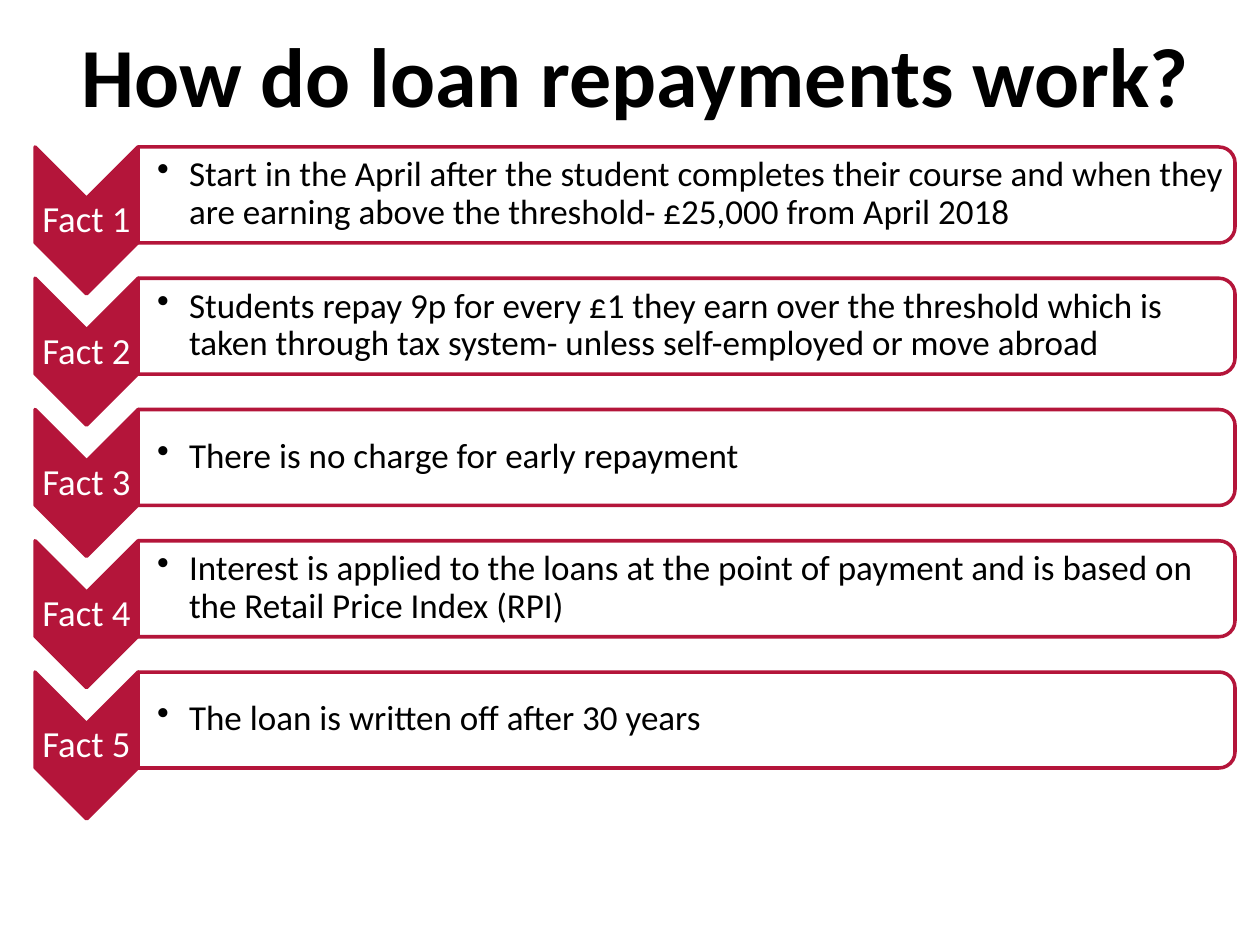
from pptx import Presentation
from pptx.dml.color import RGBColor
from pptx.enum.shapes import MSO_SHAPE as Preset
from pptx.enum.text import MSO_ANCHOR as Anchor, MSO_AUTO_SIZE as AutoSize, PP_ALIGN as Align
from pptx.oxml.ns import qn
from pptx.util import Emu, Pt
from lxml.etree import SubElement

PX_PER_INCH = 126
CRIMSON = RGBColor(0xB4, 0x15, 0x3A)
WHITE = RGBColor(0xFF, 0xFF, 0xFF)
BLACK = RGBColor(0, 0, 0)

FIRST_TOP, LAST_TOP = 147, 672
FACTS = [
    "Start in the April after the student completes their course and when they "
    "are earning above the threshold- £25,000 from April 2018",
    "Students repay 9p for every £1 they earn over the threshold which is "
    "taken through tax system- unless self-employed or move abroad",
    "There is no charge for early repayment",
    "Interest is applied to the loans at the point of payment and is based on "
    "the Retail Price Index (RPI)",
    "The loan is written off after 30 years",
]

TITLE_FONT = {"name": "Calibri", "size": Pt(48), "bold": True}
LABEL_FONT = {"name": "Calibri", "size": Pt(21)}
FACT_FONT = {"name": "Calibri", "size": Pt(20)}


def px(length):
    return Emu(round(length * 914400 / PX_PER_INCH))


def set_all(target, values):
    for name, value in values.items():
        setattr(target, name, value)


def set_font(paragraph, values, color):
    set_all(paragraph.font, values)
    paragraph.font.color.rgb = color


def add_turned_shape(slide, preset, left, top, width, height, fill):
    """Add a preset turned a quarter clockwise; the box given is the one seen."""
    shape = slide.shapes.add_shape(
        preset, px(left + (width - height) / 2), px(top + (height - width) / 2),
        px(height), px(width))
    shape.rotation = 90
    shape.shadow.inherit = False
    shape.fill.solid()
    shape.fill.fore_color.rgb = fill
    shape.line.color.rgb = CRIMSON
    shape.line.width = Pt(2)
    return shape


def set_opacity(shape, percent):
    color = shape.fill._xPr.find(qn("a:solidFill"))[0]
    SubElement(color, qn("a:alpha")).set("val", str(percent * 1000))


def add_text(slide, box, text, inset_left=1):
    text_box = slide.shapes.add_textbox(*map(px, box))
    frame = text_box.text_frame
    set_all(frame, {
        "word_wrap": True, "vertical_anchor": Anchor.MIDDLE,
        "margin_left": px(inset_left), "margin_right": px(1),
        "margin_top": px(1), "margin_bottom": px(1)})
    paragraph = frame.paragraphs[0]
    paragraph.text = text
    paragraph.line_spacing = 0.9
    return paragraph


def add_bullet(paragraph, indent):
    properties = paragraph._p.get_or_add_pPr()
    properties.set("marL", str(px(indent)))
    properties.set("indent", str(-px(indent)))
    SubElement(properties, qn("a:buChar")).set("char", "•")


def add_title(slide, text):
    title = slide.shapes.title
    set_all(title, {"left": px(25), "top": px(0), "width": px(1221), "height": px(147)})
    frame = title.text_frame
    set_all(frame, {"text": text, "word_wrap": True, "auto_size": AutoSize.NONE,
                    "vertical_anchor": Anchor.MIDDLE})
    paragraph = frame.paragraphs[0]
    paragraph.alignment = Align.CENTER
    set_font(paragraph, TITLE_FONT, BLACK)


def add_fact(slide, number, text, top):
    # Chevron with its label
    add_turned_shape(slide, Preset.CHEVRON, 35, top, 103, 147, CRIMSON)
    label = add_text(slide, (35, top + 52, 103, 44), f"Fact {number}")
    label.alignment = Align.CENTER
    set_font(label, LABEL_FONT, WHITE)

    # Panel with the bulleted fact
    panel = add_turned_shape(slide, Preset.ROUND_2_SAME_RECTANGLE, 138, top, 1097, 96, WHITE)
    set_opacity(panel, 90)
    fact = add_text(slide, (137, top + 4, 1092, 87), text, inset_left=20)
    add_bullet(fact, 32)
    set_font(fact, FACT_FONT, BLACK)


def main():
    presentation = Presentation()
    presentation.slide_width, presentation.slide_height = px(1260), px(945)
    slide = presentation.slides.add_slide(presentation.slide_layouts.get_by_name("Title Only"))
    add_title(slide, "How do loan repayments work?")

    # Facts spread evenly down the slide
    pitch = (LAST_TOP - FIRST_TOP) / (len(FACTS) - 1)
    for row, text in enumerate(FACTS):
        add_fact(slide, row + 1, text, FIRST_TOP + row * pitch)
    presentation.save("out.pptx")


if __name__ == "__main__":
    main()
